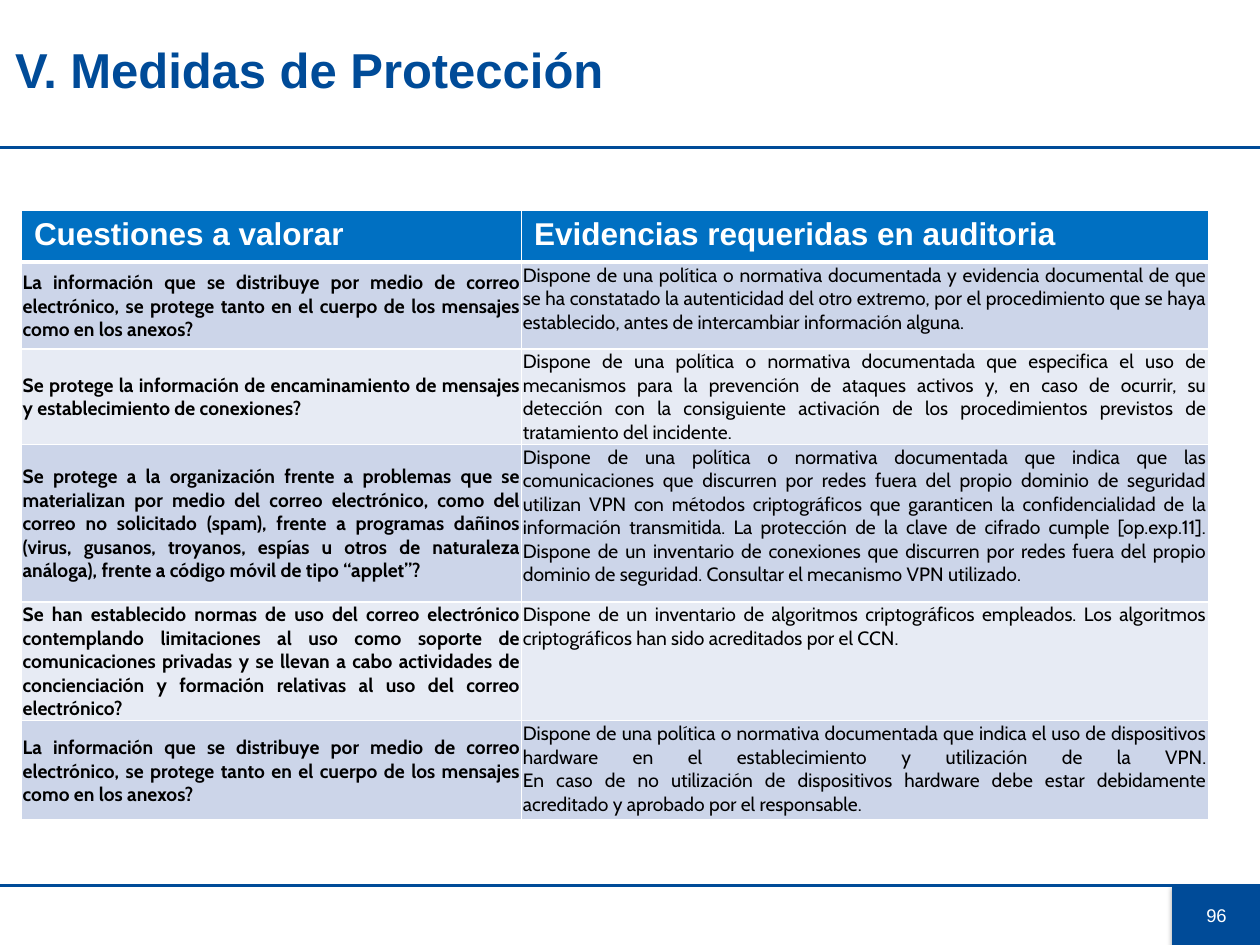
from copy import deepcopy
from lxml.etree import SubElement
from pptx import Presentation
from pptx.dml.color import RGBColor
from pptx.enum.shapes import MSO_CONNECTOR, MSO_SHAPE
from pptx.enum.text import MSO_ANCHOR as ANCHOR, MSO_AUTO_SIZE, PP_ALIGN as ALIGN
from pptx.oxml.ns import qn
from pptx.util import Inches, Pt

TITLE = "V. Medidas de Protección"
PAGE = "96"
HEADERS = ["Cuestiones a valorar", "Evidencias requeridas en auditoria"]
ROWS = [
    ("La información que se distribuye por medio de correo electrónico, se protege tanto en el cuerpo de los mensajes como en los anexos? ",
     "Dispone de una política o normativa documentada y evidencia documental de que se ha constatado la autenticidad del otro extremo, por el procedimiento que se haya establecido, antes de intercambiar información alguna."),
    ("Se protege la información de encaminamiento de mensajes y establecimiento de conexiones?",
     "Dispone de una política o normativa documentada que especifica el uso de mecanismos para la prevención de ataques activos y, en caso de ocurrir, su detección con la consiguiente activación de los procedimientos previstos de tratamiento del incidente."),
    ("Se protege a la organización frente a problemas que se materializan por medio del correo electrónico, como del correo no solicitado (spam), frente a programas dañinos (virus, gusanos, troyanos, espías u otros de naturaleza análoga), frente a código móvil de tipo “applet”?",
     "Dispone de una política o normativa documentada que indica que las comunicaciones que discurren por redes fuera del propio dominio de seguridad utilizan VPN con métodos criptográficos que garanticen la confidencialidad de la información transmitida. La protección de la clave de cifrado cumple [op.exp.11]. Dispone de un inventario de conexiones que discurren por redes fuera del propio dominio de seguridad. Consultar el mecanismo VPN utilizado."),
    ("Se han establecido normas de uso del correo electrónico contemplando limitaciones al uso como soporte de comunicaciones privadas y se llevan a cabo actividades de concienciación y formación relativas al uso del correo electrónico? ",
     "Dispone de un inventario de algoritmos criptográficos empleados. Los algoritmos criptográficos han sido acreditados por el CCN."),
    ("La información que se distribuye por medio de correo electrónico, se protege tanto en el cuerpo de los mensajes como en los anexos? ",
     "Dispone de una política o normativa documentada que indica el uso de dispositivos hardware en el establecimiento y utilización de la VPN.\nEn caso de no utilización de dispositivos hardware debe estar debidamente acreditado y aprobado por el responsable. "),
]
COL_WIDTHS = [3.97, 5.45]
ROW_HEIGHTS = [0.41, 0.69, 0.75, 1.25, 0.94, 0.79]
NAVY, HEADER_BLUE, WHITE, BLACK = "004B98", "0070C2", "FFFFFF", "000000"
BANDS = ["CCD5E9", "E7EBF4"]


def rgb(value):
    return RGBColor.from_string(value)


def write(p, text, size, color, font="Arial", bold=False, align=ALIGN.LEFT):
    p.alignment = align
    for i, line in enumerate(text.split("\n")):
        if i:
            p.add_line_break()
            p._p[-1].append(deepcopy(r._r.rPr))
        r = p.add_run()
        r.text = line
        r.font.size, r.font.name, r.font.bold = Pt(size), font, bold
        r.font.color.rgb = rgb(color)


def add_rule(y):
    line = slide.shapes.add_connector(MSO_CONNECTOR.STRAIGHT, 0, Inches(y), prs.slide_width, Inches(y))
    line.line.color.rgb = rgb(NAVY)
    line.line.width = Pt(1.5)
    SubElement(line._element.spPr, qn("a:effectLst"))


def add_shadow(sp):
    effects = SubElement(sp._element.spPr, qn("a:effectLst"))
    shadow = SubElement(effects, qn("a:outerShdw"), blurRad=str(Pt(3.1)), dist=str(Pt(1.8)),
                        dir="5400000", rotWithShape="0")
    color = SubElement(shadow, qn("a:srgbClr"), val=BLACK)
    SubElement(color, qn("a:alpha"), val="35000")


def set_borders(cell, top, bottom):
    tcPr = cell._tc.get_or_add_tcPr()
    for side, width in (("L", 1), ("R", 1), ("T", top), ("B", bottom)):
        ln = SubElement(tcPr, qn(f"a:ln{side}"), w=str(Pt(width)))
        SubElement(SubElement(ln, qn("a:solidFill")), qn("a:srgbClr"), val=WHITE)


prs = Presentation()
prs.slide_width, prs.slide_height = Inches(10), Inches(7.5)
slide = prs.slides.add_slide(prs.slide_layouts[5])

add_rule(1.17)
badge = slide.shapes.add_shape(MSO_SHAPE.RECTANGLE, Inches(9.31), Inches(7.03), Inches(0.69), Inches(0.47))
badge.fill.solid()
badge.fill.fore_color.rgb = rgb(NAVY)
badge.line.color.rgb = rgb(NAVY)
badge.line.width = Pt(0.75)
add_shadow(badge)
badge.text_frame.vertical_anchor = ANCHOR.MIDDLE
write(badge.text_frame.paragraphs[0], PAGE, 10.5, WHITE, align=ALIGN.CENTER)
add_rule(7.03)

title = slide.shapes.title
title.left, title.top, title.width, title.height = Inches(0.12), 0, Inches(9.53), Inches(1.16)
tf = title.text_frame
tf.auto_size = MSO_AUTO_SIZE.NONE
tf.word_wrap = True
tf.vertical_anchor = ANCHOR.MIDDLE
tf.margin_left = tf.margin_right = 0
tf.paragraphs[0].line_spacing = 0.9
write(tf.paragraphs[0], TITLE, 28, NAVY, bold=True)

table = slide.shapes.add_table(len(ROW_HEIGHTS), len(COL_WIDTHS), Inches(0.17), Inches(1.67),
                               Inches(sum(COL_WIDTHS)), Inches(sum(ROW_HEIGHTS))).table
for col, width in zip(table.columns, COL_WIDTHS):
    col.width = Inches(width)
for row, height in zip(table.rows, ROW_HEIGHTS):
    row.height = Inches(height)

for i, texts in enumerate([HEADERS, *ROWS]):
    for j, text in enumerate(texts):
        cell = table.cell(i, j)
        set_borders(cell, 3 if i == 1 else 1, 3 if i == 0 else 1)
        cell.fill.solid()
        cell.fill.fore_color.rgb = rgb(BANDS[(i - 1) % 2] if i else HEADER_BLUE)
        p = cell.text_frame.paragraphs[0]
        if i == 0:
            write(p, text, 18, WHITE, bold=True)
            continue
        cell.margin_left = cell.margin_right = cell.margin_top = Inches(0.01)
        cell.margin_bottom = 0
        cell.vertical_anchor = ANCHOR.TOP if j else ANCHOR.MIDDLE
        write(p, text, 11, BLACK, "Cabin", j == 0, ALIGN.JUSTIFY)

prs.save("out.pptx")
